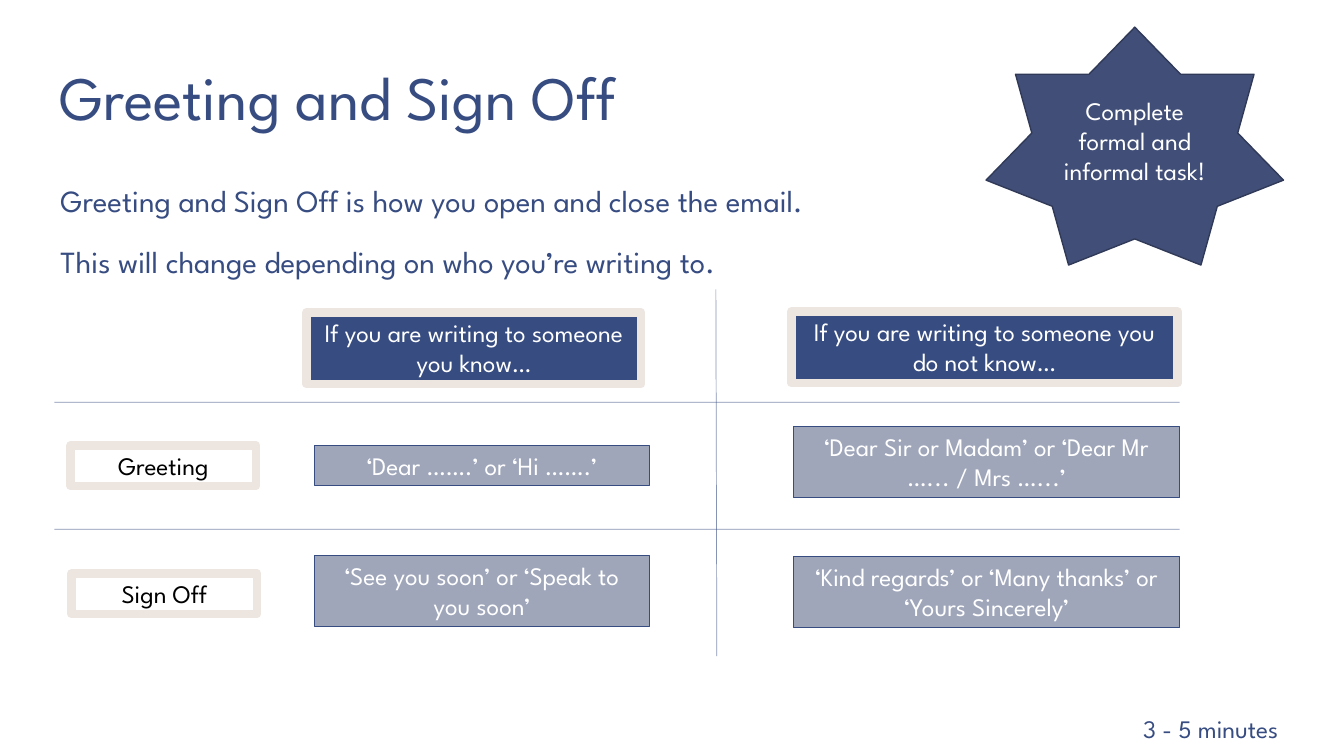
from dataclasses import dataclass
from lxml.etree import SubElement as Sub
from pptx import Presentation
from pptx.dml.color import RGBColor as Rgb
from pptx.enum.shapes import MSO_CONNECTOR as Link, MSO_SHAPE as Kind
from pptx.enum.text import MSO_ANCHOR as Anchor, MSO_AUTO_SIZE as Fit, PP_ALIGN as Align
from pptx.oxml.ns import qn
from pptx.util import Pt

PX = 9144
SIZE = (1333, 750)

TITLE = "Greeting and Sign Off"
INTRO = [
    "Greeting and Sign Off is how you open and close the email.",
    "This will change depending on who you’re writing to.",
]
BADGE = "Complete formal and informal task!"
TIME = "3 - 5 minutes"
CARDS = [
    ("head", (304, 310, 332, 71), "If you are writing to someone you know…"),
    ("head", (785, 309, 383, 71), "If you are writing to someone you do not know…"),
    ("reply", (312, 442, 332, 40), "‘Dear …….’ or ‘Hi …….’"),
    ("reply", (312, 551, 332, 71), "‘See you soon’ or ‘Speak to you soon’"),
    ("reply", (787, 423, 383, 71), "‘Dear Sir or Madam’ or ‘Dear Mr …... / Mrs …...’"),
    ("reply", (787, 552, 383, 71), "‘Kind regards’ or ‘Many thanks’ or ‘Yours Sincerely’"),
    ("label", (70, 442, 184, 40), "Greeting"),
    ("label", (71, 569, 184, 40), "Sign Off"),
]
RULES = [(710, 287, 711, 651), (54, 399, 1170, 399), (54, 525, 1170, 525)]


@dataclass(frozen=True)
class Theme:
    font: str = "League Spartan"
    navy: str = "374C81"
    slate: str = "414E77"
    edge: str = "303A58"
    sand: str = "EDE5DF"
    white: str = "FFFFFF"
    black: str = "000000"
    title: int = 44
    intro: int = 22
    note: int = 18


T = Theme()
LOOKS = {
    "head": (T.navy, 100, T.sand, 6, T.white),
    "reply": (T.slate, 50, T.navy, 0.75, T.white),
    "label": (T.white, 100, T.sand, 6, T.black),
    "badge": (T.slate, 100, T.edge, 1, T.white),
}


def scale(box):
    return [n * PX for n in box]


def fade(fill, part):
    fill_xml = fill._xPr.find(qn("a:solidFill"))
    Sub(fill_xml[0], qn("a:alpha"), val=str(part * 1000))


def write(shape, lines, size, color, align=Align.LEFT, anchor=Anchor.TOP,
          pad=(10, 5), space=1.0, gap=0, fit=Fit.NONE):
    frame = shape.text_frame
    frame.word_wrap = True
    frame.auto_size = fit
    frame.vertical_anchor = anchor
    frame.margin_left = frame.margin_right = pad[0] * PX
    frame.margin_top = frame.margin_bottom = pad[1] * PX
    for i, line in enumerate(lines):
        para = frame.add_paragraph() if i else frame.paragraphs[0]
        para.alignment = align
        para.line_spacing = space
        para.space_before = Pt(gap if i else 0)
        run = para.add_run()
        run.text = line
        run.font.name = T.font
        run.font.size = Pt(size)
        run.font.color.rgb = Rgb.from_string(color)


def label(slide, box, lines, size, **opts):
    write(slide.shapes.add_textbox(*scale(box)), lines, size, T.navy, **opts)


def card(slide, kind, look, box, text, **opts):
    fill, part, edge, width, ink = LOOKS[look]
    shape = slide.shapes.add_shape(kind, *scale(box))
    shape.shadow.inherit = False
    shape.fill.solid()
    shape.fill.fore_color.rgb = Rgb.from_string(fill)
    if part < 100:
        fade(shape.fill, part)
    shape.line.color.rgb = Rgb.from_string(edge)
    shape.line.width = Pt(width)
    write(shape, [text], T.note, ink, align=Align.CENTER, **opts)


def rule(slide, ends):
    line = slide.shapes.add_connector(Link.STRAIGHT, *scale(ends))
    line.line.color.rgb = Rgb.from_string(T.navy)
    line.line.width = Pt(0.5)
    fade(line.line.fill, 60)
    Sub(line._element.spPr, qn("a:effectLst"))


def main():
    deck = Presentation()
    deck.slide_width, deck.slide_height = scale(SIZE)
    slide = deck.slides.add_slide(deck.slide_layouts[6])
    label(slide, (46, 39, 933, 100), [TITLE], T.title,
          anchor=Anchor.BOTTOM, pad=(13, 7), space=0.85)
    label(slide, (47, 176, 1049, 112), INTRO, T.intro,
          pad=(13, 7), space=0.95, gap=18.7)
    for look, box, text in CARDS:
        card(slide, Kind.RECTANGLE, look, box, text, fit=Fit.SHAPE_TO_FIT_TEXT)
    for ends in RULES:
        rule(slide, ends)
    card(slide, Kind.STAR_7_POINT, "badge", (978, 27, 295, 236), BADGE,
         anchor=Anchor.MIDDLE)
    label(slide, (1124, 703, 189, 40), [TIME], T.note, fit=Fit.SHAPE_TO_FIT_TEXT)
    deck.save("out.pptx")


if __name__ == "__main__":
    main()
